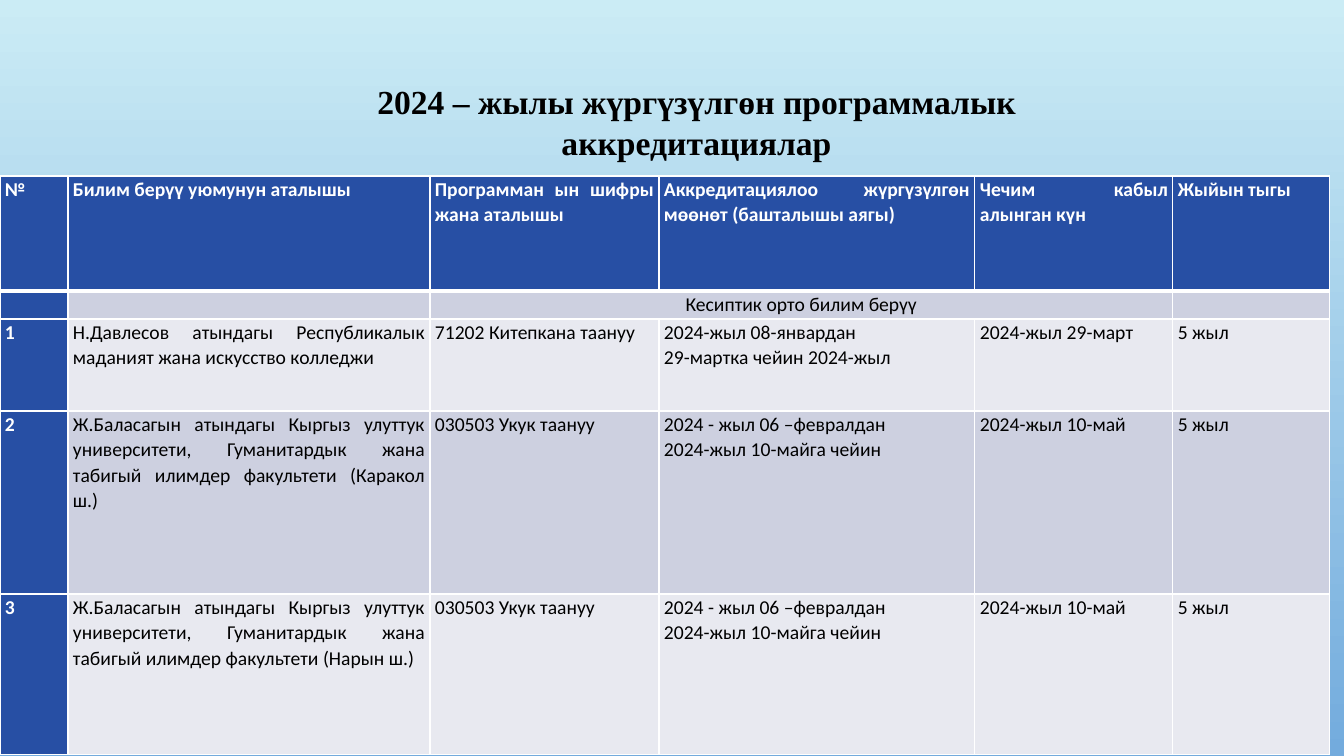
from lxml.etree import SubElement
from pptx import Presentation
from pptx.dml.color import RGBColor
from pptx.enum.text import MSO_ANCHOR, MSO_AUTO_SIZE, PP_ALIGN
from pptx.oxml import parse_xml
from pptx.oxml.ns import nsdecls, qn
from pptx.util import Pt

PX = 914400 / 100.8
COLORS = {
    "sky": "CBECF5", "horizon": "73ABDD", "header": "274FA4",
    "dark_band": "CDD0E0", "light_band": "E8E9F0", "white": "FFFFFF", "black": "000000",
}
COLUMN_WIDTHS = [68, 362, 229, 316, 198, 157]
ROW_HEIGHTS = [115, 28, 92, 183, 161]
ROW_BANDS = ["header", "dark_band", "light_band", "dark_band", "light_band"]
SECTION_ROW = 1
UNIVERSITY = ("Ж.Баласагын атындагы Кыргыз улуттук университети, "
              "Гуманитардык жана табигый илимдер факультети")
SPRING_TERM = "2024 - жыл 06 –февралдан\n2024-жыл 10-майга чейин"
ACCREDITATIONS = [
    ["№", "Билим берүү уюмунун аталышы", "Программан ын шифры жана аталышы",
     "Аккредитациялоо жүргүзүлгөн мөөнөт (башталышы аягы)",
     "Чечим кабыл алынган күн", "Жыйын тыгы"],
    ["", "", "Кесиптик орто билим берүү", "", "", ""],
    ["1", "Н.Давлесов атындагы Республикалык маданият жана искусство колледжи",
     "71202 Китепкана таануу", "2024-жыл 08-январдан\n29-мартка чейин 2024-жыл",
     "2024-жыл 29-март", "5 жыл"],
    ["2", f"{UNIVERSITY} (Каракол ш.)", "030503 Укук таануу", SPRING_TERM,
     "2024-жыл 10-май", "5 жыл"],
    ["3", f"{UNIVERSITY} (Нарын ш.)", "030503 Укук таануу", SPRING_TERM,
     "2024-жыл 10-май", "5 жыл"],
]


def px(length):
    return round(length * PX)


def rgb(name):
    return RGBColor.from_string(COLORS[name])


def write(frame, text, size=14, font="Calibri", color="black", bold=False,
          align=PP_ALIGN.JUSTIFY, spacing=1.07):
    frame.word_wrap = True
    for index, line in enumerate(text.split("\n")):
        paragraph = frame.add_paragraph() if index else frame.paragraphs[0]
        paragraph.alignment = align
        paragraph.line_spacing = spacing
        if not line:
            SubElement(paragraph._p, qn("a:endParaRPr"), sz=str(size * 100))
            continue
        run = paragraph.add_run()
        run.text = line
        run.font.size = Pt(size)
        run.font.name = font
        run.font.bold = bold
        run.font.color.rgb = rgb(color)


def draw_borders(cell, top=1, bottom=1):
    properties = cell._tc.get_or_add_tcPr()
    sides = [("lnL", 1), ("lnR", 1), ("lnT", top), ("lnB", bottom)]
    for index, (side, points) in enumerate(sides):
        properties.insert(index, parse_xml(
            f'<a:{side} {nsdecls("a")} w="{Pt(points)}"><a:solidFill>'
            f'<a:srgbClr val="{COLORS["white"]}"/></a:solidFill></a:{side}>'))


def paint_background(slide):
    fill = slide.background.fill
    fill.gradient()
    fill.gradient_angle = 270
    for stop, name in zip(fill.gradient_stops, ["sky", "horizon"]):
        stop.color.rgb = rgb(name)


def place_title(slide, left, top, width, height):
    title = slide.shapes.title
    title.left, title.top = px(left), px(top)
    title.width, title.height = px(width), px(height)
    frame = title.text_frame
    frame.auto_size = MSO_AUTO_SIZE.NONE
    frame.vertical_anchor = MSO_ANCHOR.MIDDLE
    write(frame, "2024 – жылы жүргүзүлгөн программалык аккредитациялар", size=24,
          font="Times New Roman", bold=True, align=PP_ALIGN.CENTER, spacing=1.0)


def fill_cell(cell, text, row, column):
    heading = row == 0 or column == 0
    cell.margin_left = cell.margin_right = px(5)
    cell.margin_top = cell.margin_bottom = 0
    cell.fill.solid()
    cell.fill.fore_color.rgb = rgb("header" if heading else ROW_BANDS[row])
    draw_borders(cell, top=3 if row == 1 else 1, bottom=3 if row == 0 else 1)
    write(cell.text_frame, text, color="white" if heading else "black", bold=heading,
          align=PP_ALIGN.CENTER if row == SECTION_ROW else PP_ALIGN.JUSTIFY)


def place_accreditations(slide, left, top):
    table = slide.shapes.add_table(
        len(ROW_HEIGHTS), len(COLUMN_WIDTHS), px(left), px(top),
        px(sum(COLUMN_WIDTHS)), px(sum(ROW_HEIGHTS))).table
    table.horz_banding = False
    for column, width in zip(table.columns, COLUMN_WIDTHS):
        column.width = px(width)
    for row, height in zip(table.rows, ROW_HEIGHTS):
        row.height = px(height)
    for row, texts in enumerate(ACCREDITATIONS):
        for column, text in enumerate(texts):
            fill_cell(table.cell(row, column), text, row, column)
    table.cell(SECTION_ROW, 2).merge(table.cell(SECTION_ROW, 4))


def main():
    presentation = Presentation()
    presentation.slide_width, presentation.slide_height = px(1344), px(756)
    slide = presentation.slides.add_slide(presentation.slide_layouts[0])
    subtitle = slide.placeholders[1].element
    subtitle.getparent().remove(subtitle)
    paint_background(slide)
    place_title(slide, 233, 35, 927, 173)
    place_accreditations(slide, 0, 176)
    presentation.save("out.pptx")


if __name__ == "__main__":
    main()
